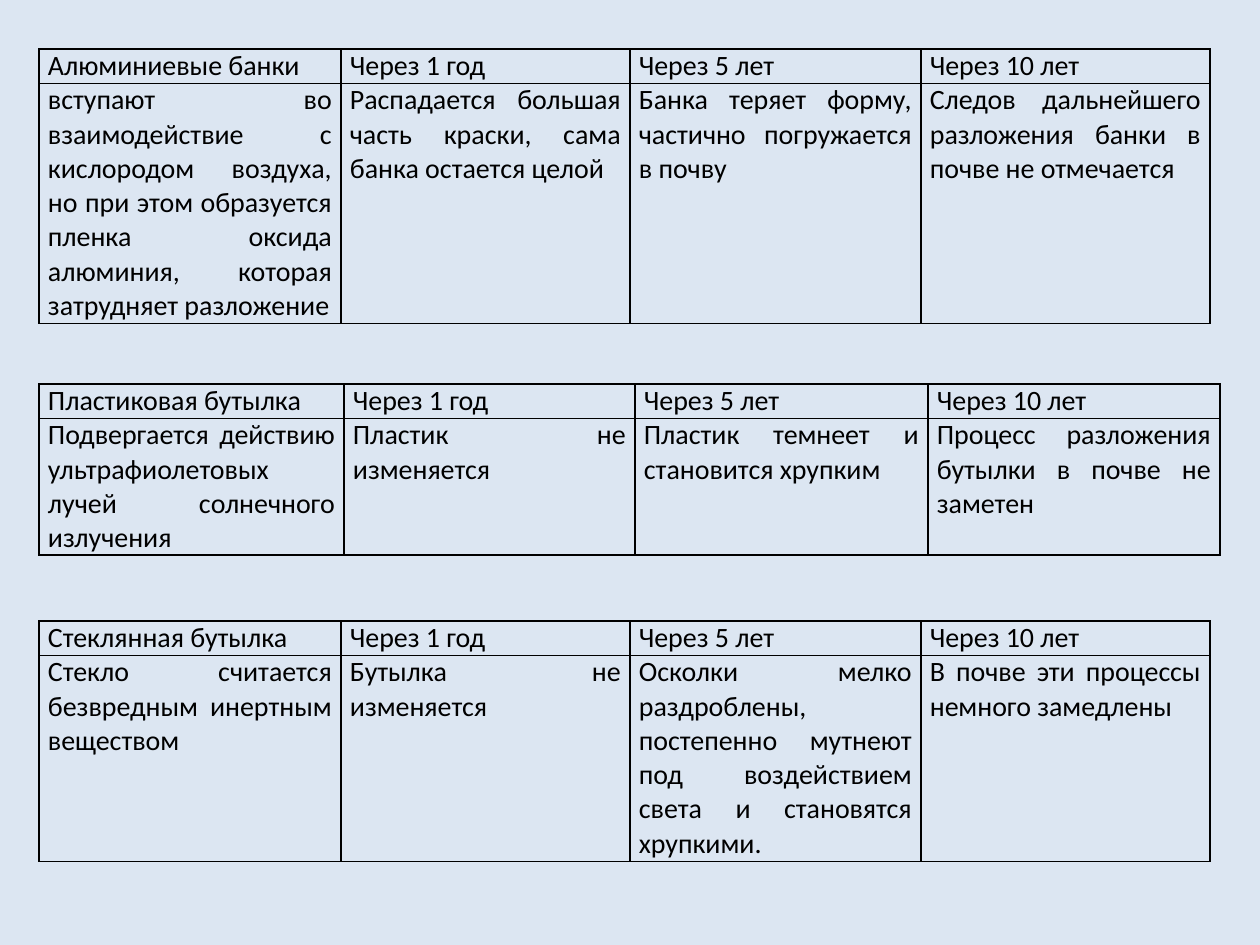
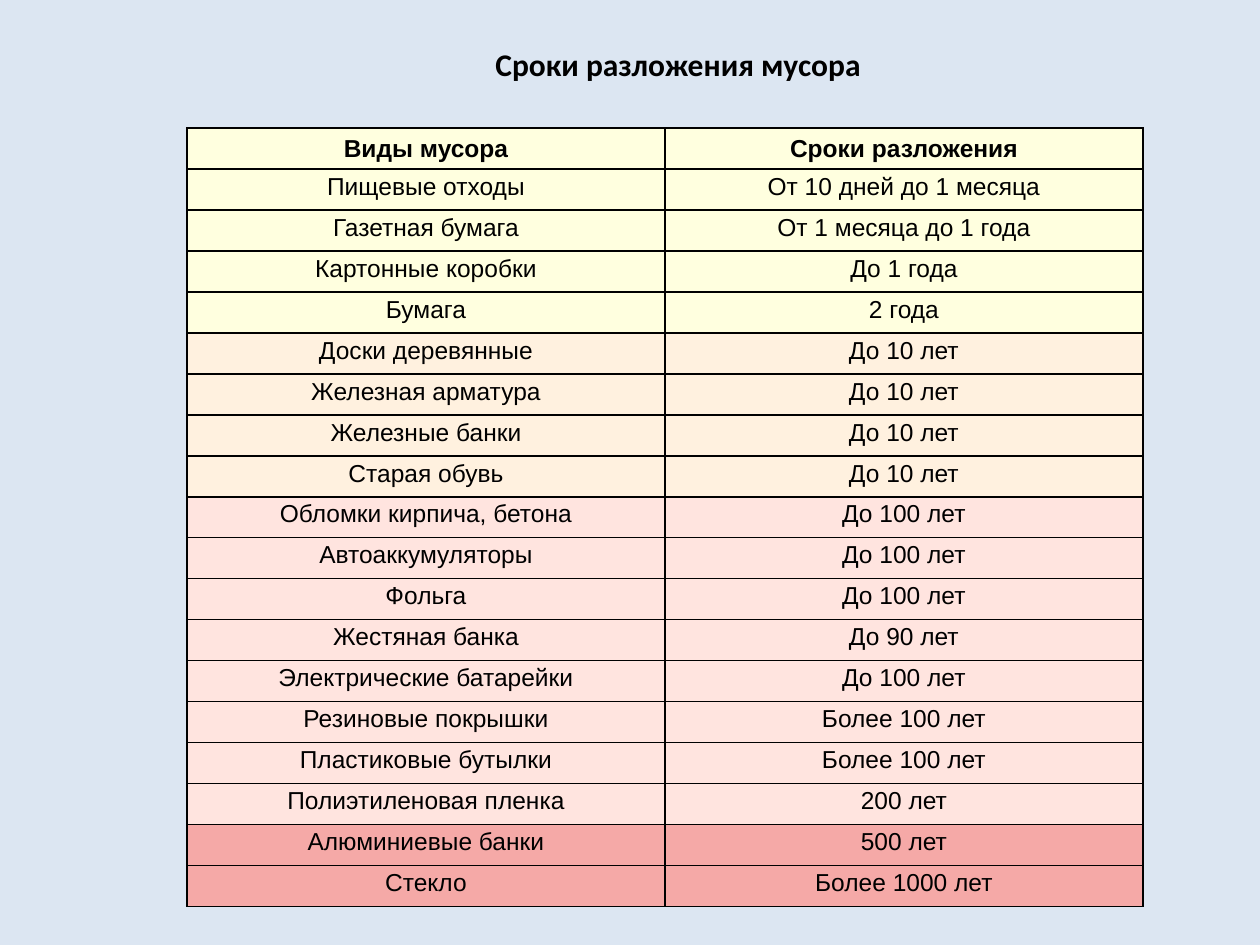
from lxml import etree
from pptx import Presentation
from pptx.dml.color import RGBColor
from pptx.enum.text import MSO_ANCHOR, MSO_AUTO_SIZE, PP_ALIGN
from pptx.oxml.ns import qn
from pptx.util import Emu, Pt

JUSTIFY, CENTER = PP_ALIGN.JUSTIFY, PP_ALIGN.CENTER
TOP, MIDDLE = MSO_ANCHOR.TOP, MSO_ANCHOR.MIDDLE
FIT_SHAPE = MSO_AUTO_SIZE.SHAPE_TO_FIT_TEXT

PX_PER_INCH = 126
BLANK_LAYOUT = 6
BACKGROUND, INK = "DCE6F2", "000000"
YELLOW, ORANGE, PINK, RED = "FFFFDF", "FFF1DF", "FFE4DF", "F5A9A7"
BORDER_PT = 1

AGES = ["Через 1 год", "Через 5 лет", "Через 10 лет"]
NARROW, WIDE = [302, 289, 291, 289], [305, 291, 293, 292]
HEADER_HEIGHT = 34
# top, column widths, height of the text row, item, its description and its state at each age
DECAY_TABLES = [
    (49, NARROW, 240, "Алюминиевые банки", [
        "вступают во взаимодействие с кислородом воздуха, но при этом образуется "
        "пленка оксида алюминия, которая затрудняет разложение",
        "Распадается большая часть краски, сама банка остается целой",
        "Банка теряет форму, частично погружается в почву",
        "Следов дальнейшего разложения банки в почве не отмечается"]),
    (384, WIDE, 137, "Пластиковая бутылка", [
        "Подвергается действию ультрафиолетовых лучей солнечного излучения",
        "Пластик не изменяется",
        "Пластик темнеет и становится хрупким",
        "Процесс разложения бутылки в почве не заметен"]),
    (621, NARROW, 206, "Стеклянная бутылка", [
        "Стекло считается безвредным инертным веществом",
        "Бутылка не изменяется",
        "Осколки мелко раздроблены, постепенно мутнеют под воздействием света "
        "и становятся хрупкими.",
        "В почве эти процессы немного замедлены"]),
]

DECAY_TIMES = [
    (YELLOW, [("Виды мусора", "Сроки разложения"),
              ("Пищевые отходы", "От 10 дней до 1 месяца"),
              ("Газетная бумага", "От 1 месяца до 1 года"),
              ("Картонные коробки", "До 1 года"),
              ("Бумага", "2 года")]),
    (ORANGE, [("Доски деревянные", "До 10 лет"),
              ("Железная арматура", "До 10 лет"),
              ("Железные банки", "До 10 лет"),
              ("Старая обувь", "До 10 лет")]),
    (PINK, [("Обломки кирпича, бетона", "До 100 лет"),
            ("Автоаккумуляторы", "До 100 лет"),
            ("Фольга", "До 100 лет"),
            ("Жестяная банка", "До 90 лет"),
            ("Электрические батарейки", "До 100 лет"),
            ("Резиновые покрышки", "Более 100 лет"),
            ("Пластиковые бутылки", "Более 100 лет"),
            ("Полиэтиленовая пленка", "200 лет")]),
    (RED, [("Алюминиевые банки", "500 лет"),
           ("Стекло", "Более 1000 лет")]),
]


def px(length):
    return Emu(round(length * 914400 / PX_PER_INCH))


def color(hex_value):
    return RGBColor.from_string(hex_value)


def set_all(target, values):
    for name, value in values.items():
        setattr(target, name, value)


class Deck:
    """Holds the presentation, its shared style and the current slide."""

    def __init__(self, width, height):
        self.prs = Presentation()
        set_all(self.prs, {"slide_width": px(width), "slide_height": px(height)})
        self.slide = None

    def new_slide(self):
        self.slide = self.prs.slides.add_slide(self.prs.slide_layouts[BLANK_LAYOUT])
        fill = self.slide.background.fill
        fill.solid()
        fill.fore_color.rgb = color(BACKGROUND)

    def add_text(self, frame, text, font, size, bold=False, align=None):
        paragraph = frame.paragraphs[0]
        paragraph.alignment = align
        run = paragraph.add_run()
        run.text = text
        set_all(run.font, {"name": font, "size": Pt(size), "bold": bold})
        run.font.color.rgb = color(INK)

    def title(self, left, top, width, height, text):
        box = self.slide.shapes.add_textbox(px(left), px(top), px(width), px(height))
        set_all(box.text_frame, {"word_wrap": False, "auto_size": FIT_SHAPE})
        self.add_text(box.text_frame, text, "Calibri", 18, bold=True)

    def outline(self, cell):
        """Draw the four borders; must run before the cell gets its fill."""
        properties = cell._tc.get_or_add_tcPr()
        for side in ("lnL", "lnR", "lnT", "lnB"):
            line = etree.SubElement(properties, qn(f"a:{side}"), w=str(Pt(BORDER_PT)))
            solid = etree.SubElement(line, qn("a:solidFill"))
            etree.SubElement(solid, qn("a:srgbClr"), val=INK)

    def table(self, left, top, widths, heights, rows, margins, text_style,
              fills=None, bold_header=False):
        frame = self.slide.shapes.add_table(
            len(rows), len(widths), px(left), px(top), px(sum(widths)), px(sum(heights)))
        table = frame.table
        set_all(table, {"first_row": False, "horz_banding": False})
        for column, width in zip(table.columns, widths):
            column.width = px(width)
        for r, (texts, height) in enumerate(zip(rows, heights)):
            table.rows[r].height = px(height)
            header = bold_header and r == 0
            for c, text in enumerate(texts):
                cell = table.cell(r, c)
                self.outline(cell)
                if fills:
                    cell.fill.solid()
                    cell.fill.fore_color.rgb = color(fills[r])
                else:
                    cell.fill.background()
                set_all(cell, margins)
                cell.vertical_anchor = MIDDLE if header else TOP
                self.add_text(cell.text_frame, text, bold=header, **text_style)


def cell_margins(horizontal, vertical):
    return {"margin_left": px(horizontal), "margin_right": px(horizontal),
            "margin_top": px(vertical), "margin_bottom": px(vertical)}


def decay_stages(deck):
    deck.new_slide()
    for top, widths, text_height, item, states in DECAY_TABLES:
        deck.table(39, top, widths, [HEADER_HEIGHT, text_height], [[item, *AGES], states],
                   cell_margins(9, 0), {"font": "Calibri", "size": 16, "align": JUSTIFY})


def decay_times(deck):
    deck.new_slide()
    rows = [row for _, group in DECAY_TIMES for row in group]
    fills = [fill for fill, group in DECAY_TIMES for _ in group]
    deck.table(187, 128, [478, 478], [41] * len(rows), rows, cell_margins(4, 4),
               {"font": "Arial", "size": 14, "align": CENTER}, fills, bold_header=True)
    deck.title(483, 39, 393, 50, "Сроки разложения мусора")


def main():
    deck = Deck(1260, 945)
    decay_stages(deck)
    decay_times(deck)
    deck.prs.save("out.pptx")


if __name__ == "__main__":
    main()
